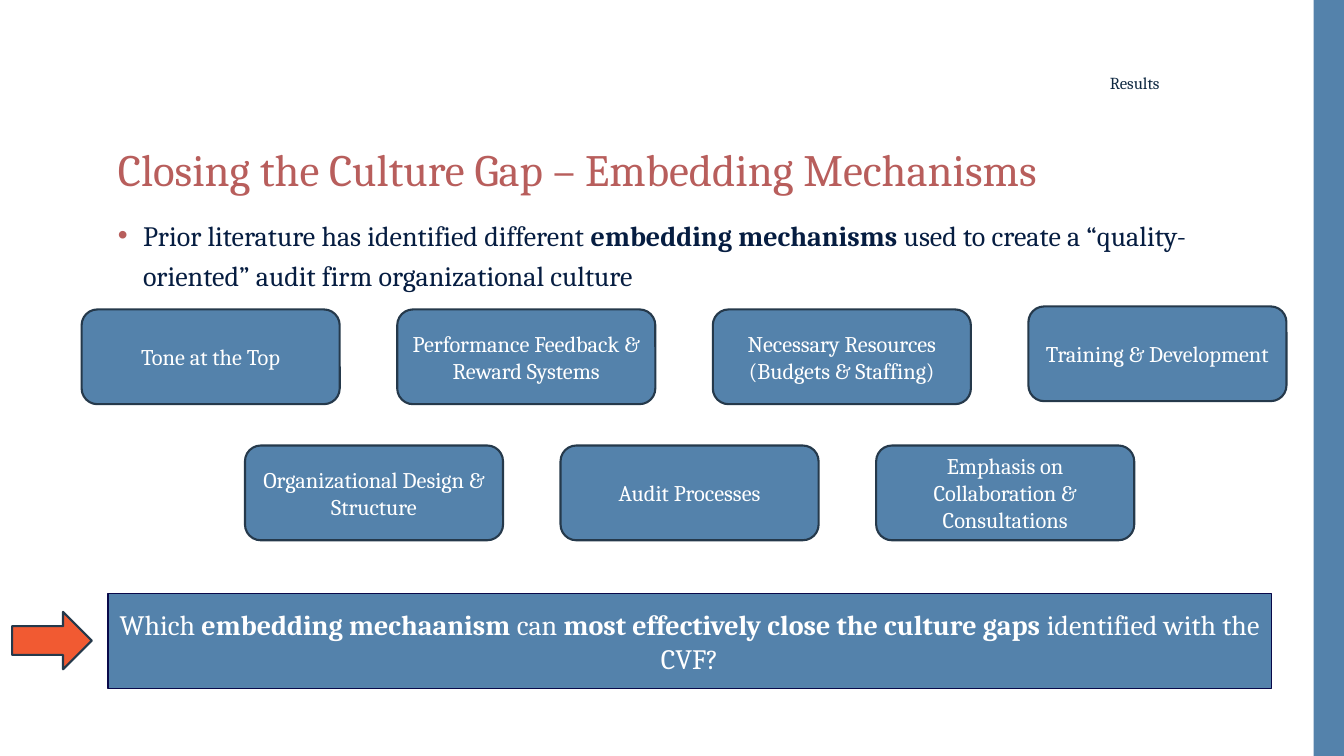
from dataclasses import dataclass

from lxml import etree
from pptx import Presentation
from pptx.dml.color import RGBColor
from pptx.enum import shapes, text
from pptx.oxml import ns
from pptx.util import Inches, Pt

COLORS = {
    "blue": "5482AB",
    "outline": "25394B",
    "banner_line": "09094A",
    "rose": "B85E5C",
    "navy": "061D41",
    "label": "0E2841",
    "orange": "F15A32",
    "white": "FFFFFF",
}
FONT = "Cambria"
SHAPE = shapes.MSO_SHAPE
ALIGN = text.PP_ALIGN
ANCHOR = text.MSO_ANCHOR


@dataclass
class Area:
    left: float
    top: float
    width: float
    height: float

    def lengths(self):
        return [Inches(n) for n in (self.left, self.top, self.width, self.height)]


@dataclass
class MechanismRow:
    left: float
    top: float
    labels: list[str]


def color(name: str) -> RGBColor:
    return RGBColor.from_string(COLORS[name])


def write(box, *parts: str, size: float, ink: str, align=ALIGN.LEFT,
          anchor=ANCHOR.TOP, spacing: float = 1.0, bullet: str = ""):
    """Write one paragraph; every second part is bold."""
    frame = box.text_frame
    frame.word_wrap = True
    frame.vertical_anchor = anchor
    para = frame.paragraphs[0]
    para.alignment = align
    para.line_spacing = spacing
    if bullet:
        add_bullet(para, bullet)
    for index, part in enumerate(parts):
        span = para.add_run()
        span.text = part
        span.font.name = FONT
        span.font.size = Pt(size)
        span.font.bold = index % 2 == 1
        span.font.color.rgb = color(ink)


def add_bullet(para, ink: str) -> None:
    props = para._p.get_or_add_pPr()
    props.set("marL", str(Inches(0.25)))
    props.set("indent", str(-Inches(0.25)))
    tint = etree.SubElement(props, ns.qn("a:buClr"))
    etree.SubElement(tint, ns.qn("a:srgbClr"), val=COLORS[ink])
    etree.SubElement(props, ns.qn("a:buFont"), typeface="Arial")
    etree.SubElement(props, ns.qn("a:buChar"), char="•")


def add_text(page, area: Area, *parts: str, **style) -> None:
    write(page.shapes.add_textbox(*area.lengths()), *parts, **style)


def add_block(page, kind, area: Area, fill: str = "blue", line: str = "",
              weight: float = 1.5):
    box = page.shapes.add_shape(kind, *area.lengths())
    box.shadow.inherit = False
    box.fill.solid()
    box.fill.fore_color.rgb = color(fill)
    if line:
        box.line.color.rgb = color(line)
        box.line.width = Pt(weight)
    else:
        box.line.fill.background()
    return box


def add_mechanisms(page, row: MechanismRow) -> None:
    for index, label in enumerate(row.labels):
        # The fourth box sits slightly higher than its neighbours
        top = row.top - (0.03 if index == 3 else 0)
        area = Area(row.left + index * 3.13, top, 2.56, 0.94)
        box = add_block(page, SHAPE.ROUNDED_RECTANGLE, area, line="outline")
        write(box, label, size=16, ink="white", align=ALIGN.CENTER, anchor=ANCHOR.MIDDLE)


def main() -> None:
    deck = Presentation()
    deck.slide_width, deck.slide_height = Inches(13.33), Inches(7.5)
    page = deck.slides.add_slide(deck.slide_layouts[6])

    # Side band and headings
    add_block(page, SHAPE.RECTANGLE, Area(13.03, 0, 0.3, 7.5))
    add_text(page, Area(1.07, 1.42, 11.18, 1.02),
             "Closing the Culture Gap – Embedding Mechanisms",
             size=32, ink="rose", spacing=0.9)
    add_text(page, Area(1.07, 2.05, 11.69, 0.93),
             "Prior literature has identified different ", "embedding mechanisms ",
             "used to create a “quality-oriented” audit firm organizational culture",
             size=20, ink="navy", spacing=1.2, bullet="rose")
    add_text(page, Area(4.93, 0.62, 6.67, 0.4), "Results",
             size=12, ink="label", align=ALIGN.RIGHT, anchor=ANCHOR.MIDDLE)

    # Embedding mechanisms
    rows = [
        MechanismRow(0.81, 3.07, [
            "Tone at the Top", "Performance Feedback & Reward Systems",
            "Necessary Resources (Budgets & Staffing)", "Training & Development"]),
        MechanismRow(2.43, 4.42, [
            "Organizational Design & Structure", "Audit Processes",
            "Emphasis on Collaboration & Consultations"]),
    ]
    for row in rows:
        add_mechanisms(page, row)

    # Closing question
    add_block(page, SHAPE.RIGHT_ARROW, Area(0.12, 6.07, 0.79, 0.57), "orange", "outline")
    banner = add_block(page, SHAPE.RECTANGLE, Area(1.07, 5.89, 11.54, 0.94),
                       line="banner_line", weight=1)
    write(banner, "Which ", "embedding mechaanism ", "can ",
          "most effectively close the culture gaps ", "identified with the CVF?",
          size=20, ink="white", align=ALIGN.CENTER, anchor=ANCHOR.MIDDLE)

    deck.save("out.pptx")


if __name__ == "__main__":
    main()
